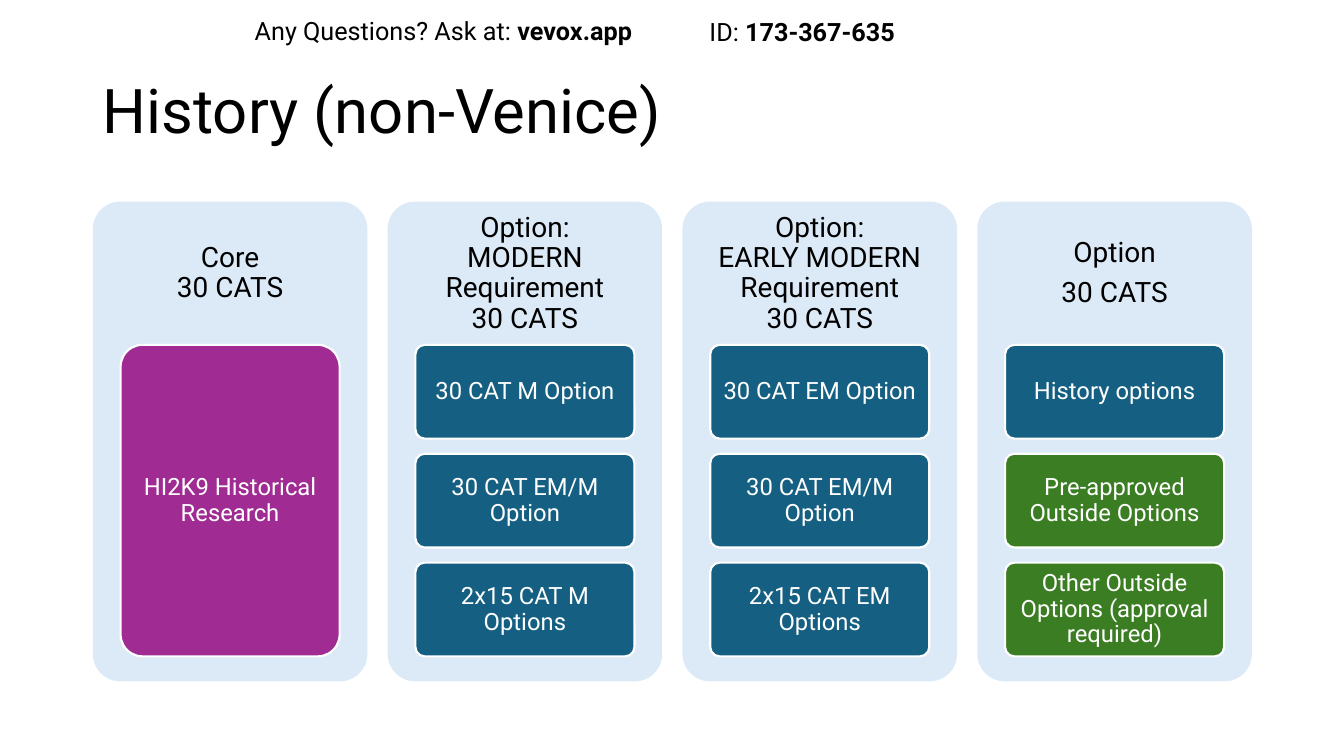
from dataclasses import dataclass

from pptx import Presentation
from pptx import util as u
from pptx.dml.color import RGBColor
from pptx.enum import shapes, text

TITLE = "History (non-Venice)"
NOTICES = [
    ("Any Questions? Ask at: ", "vevox.app", (6.17, 0.25, 10.06, 1.02)),
    ("ID: ", "173-367-635", (17.63, 0.28, 6.71, 1.07)),
]
COLUMNS = [
    ("Core\v30 CATS", [("HI2K9 Historical Research", "core")]),
    ("Option:\vMODERN Requirement\v30 CATS", [
        ("30 CAT M Option", "history"),
        ("30 CAT EM/M Option", "history"),
        ("2x15 CAT M Options", "history"),
    ]),
    ("Option:\vEARLY MODERN Requirement\v30 CATS", [
        ("30 CAT EM Option", "history"),
        ("30 CAT EM/M Option", "history"),
        ("2x15 CAT EM Options", "history"),
    ]),
    ("Option\n30 CATS", [
        ("History options", "history"),
        ("Pre-approved Outside Options", "outside"),
        ("Other Outside Options (approval required)", "outside"),
    ]),
]


@dataclass(frozen=True)
class Theme:
    font: str = "Roboto"
    ink: str = "000000"
    white: str = "FFFFFF"
    panel: str = "DCEAF7"
    core: str = "A02B93"
    history: str = "156082"
    outside: str = "3B7D23"
    title_size: int = 44
    heading_size: int = 20
    notice_size: int = 18
    card_size: int = 17
    border: float = 1.5
    corner: float = 0.1


THEME = Theme()
PANEL_LEFT, PANEL_TOP, PANEL_WIDTH, PANEL_HEIGHT = 2.34, 5.08, 6.92, 12.09
PANEL_PITCH = 7.43
HEADING_HEIGHT = 3.63
CARD_INSET, CARD_TOP, CARDS_HEIGHT, CARD_GAP = 0.7, 8.69, 7.85, 0.38


def lengths(area):
    return [u.Cm(value) for value in area]


def style(para, size, color):
    para.font.name = THEME.font
    para.font.size = u.Pt(size)
    para.font.color.rgb = RGBColor.from_string(color)


def write(shape, words, size, color, margins=(0.25, 0.13), centred=True):
    frame = shape.text_frame
    frame.word_wrap = True
    frame.vertical_anchor = text.MSO_ANCHOR.MIDDLE
    frame.margin_left = frame.margin_right = u.Cm(margins[0])
    frame.margin_top = frame.margin_bottom = u.Cm(margins[1])
    frame.text = words
    for para in frame.paragraphs:
        para.alignment = text.PP_ALIGN.CENTER if centred else text.PP_ALIGN.LEFT
        para.line_spacing = 0.9
        style(para, size, color)
    for para in frame.paragraphs[:-1]:
        para.space_after = u.Pt(7)


def add_rounded(page, area, fill):
    box = page.shapes.add_shape(shapes.MSO_SHAPE.ROUNDED_RECTANGLE, *lengths(area))
    box.adjustments[0] = THEME.corner
    box.shadow.inherit = False
    box.fill.solid()
    box.fill.fore_color.rgb = RGBColor.from_string(fill)
    box.line.fill.background()
    return box


def add_card(page, area, words, fill):
    card = add_rounded(page, area, fill)
    card.line.color.rgb = RGBColor.from_string(THEME.white)
    card.line.width = u.Pt(THEME.border)
    write(card, words, THEME.card_size, THEME.white, (0.13, 0.1))


def add_column(page, left, heading, cards):
    add_rounded(page, (left, PANEL_TOP, PANEL_WIDTH, PANEL_HEIGHT), THEME.panel)
    area = (left, PANEL_TOP, PANEL_WIDTH, HEADING_HEIGHT)
    box = page.shapes.add_textbox(*lengths(area))
    write(box, heading, THEME.heading_size, THEME.ink, (0.2, 0.2))
    width = PANEL_WIDTH - 2 * CARD_INSET
    height = (CARDS_HEIGHT - CARD_GAP * (len(cards) - 1)) / len(cards)
    for row, (words, kind) in enumerate(cards):
        top = CARD_TOP + row * (height + CARD_GAP)
        add_card(page, (left + CARD_INSET, top, width, height), words, getattr(THEME, kind))


def add_notice(page, label, value, area):
    box = page.shapes.add_textbox(*lengths(area))
    box.text_frame.word_wrap = True
    para = box.text_frame.paragraphs[0]
    style(para, THEME.notice_size, THEME.ink)
    para.add_run().text = label
    span = para.add_run()
    span.text = value
    span.font.bold = True


def main():
    deck = Presentation()
    deck.slide_width, deck.slide_height = u.Cm(33.87), u.Cm(19.05)
    page = deck.slides.add_slide(deck.slide_layouts[6])
    title = page.shapes.add_textbox(*lengths((2.34, 1.02, 29.21, 3.68)))
    write(title, TITLE, THEME.title_size, THEME.ink, centred=False)
    for index, (heading, cards) in enumerate(COLUMNS):
        add_column(page, PANEL_LEFT + index * PANEL_PITCH, heading, cards)
    for notice in NOTICES:
        add_notice(page, *notice)
    deck.save("out.pptx")


if __name__ == "__main__":
    main()
